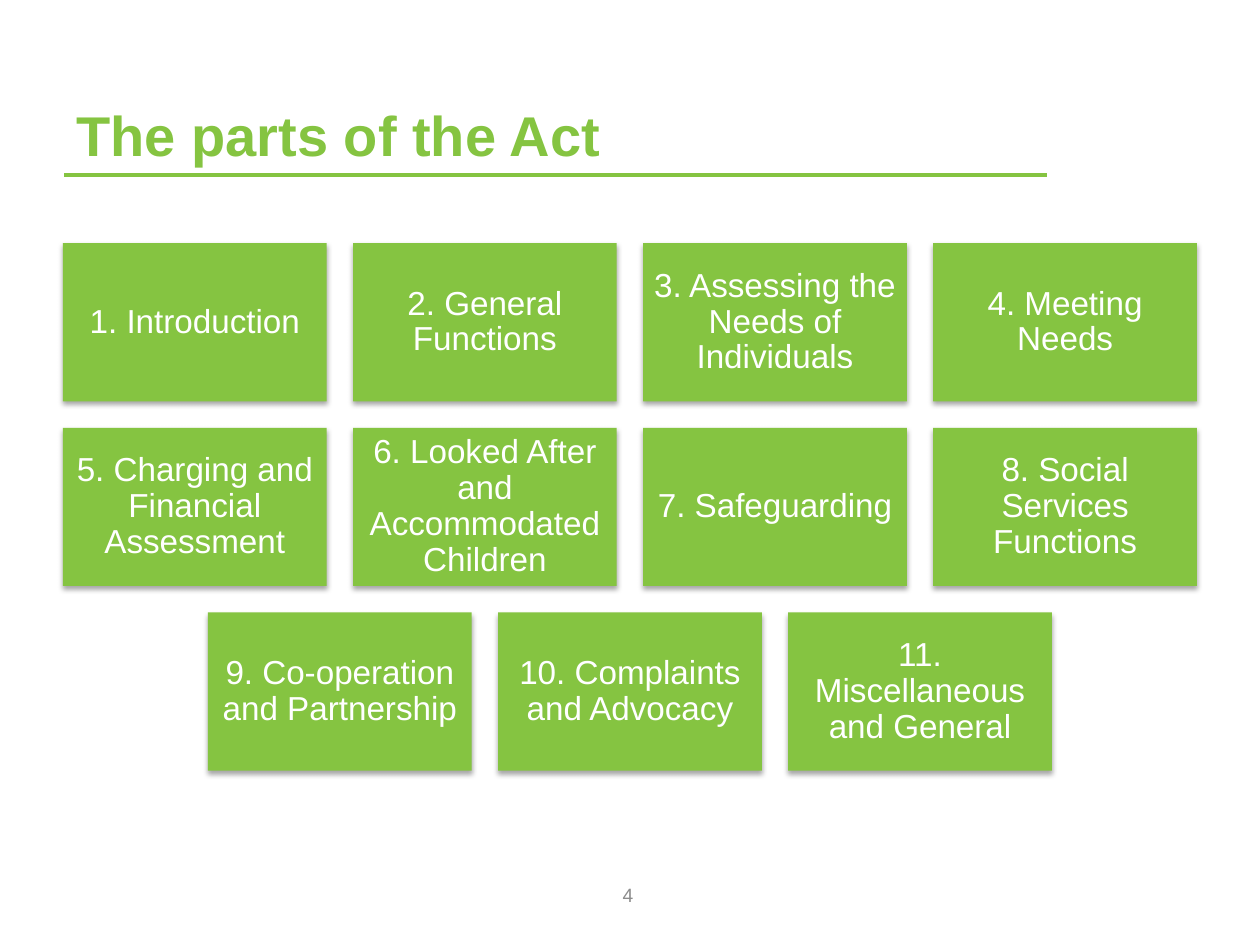
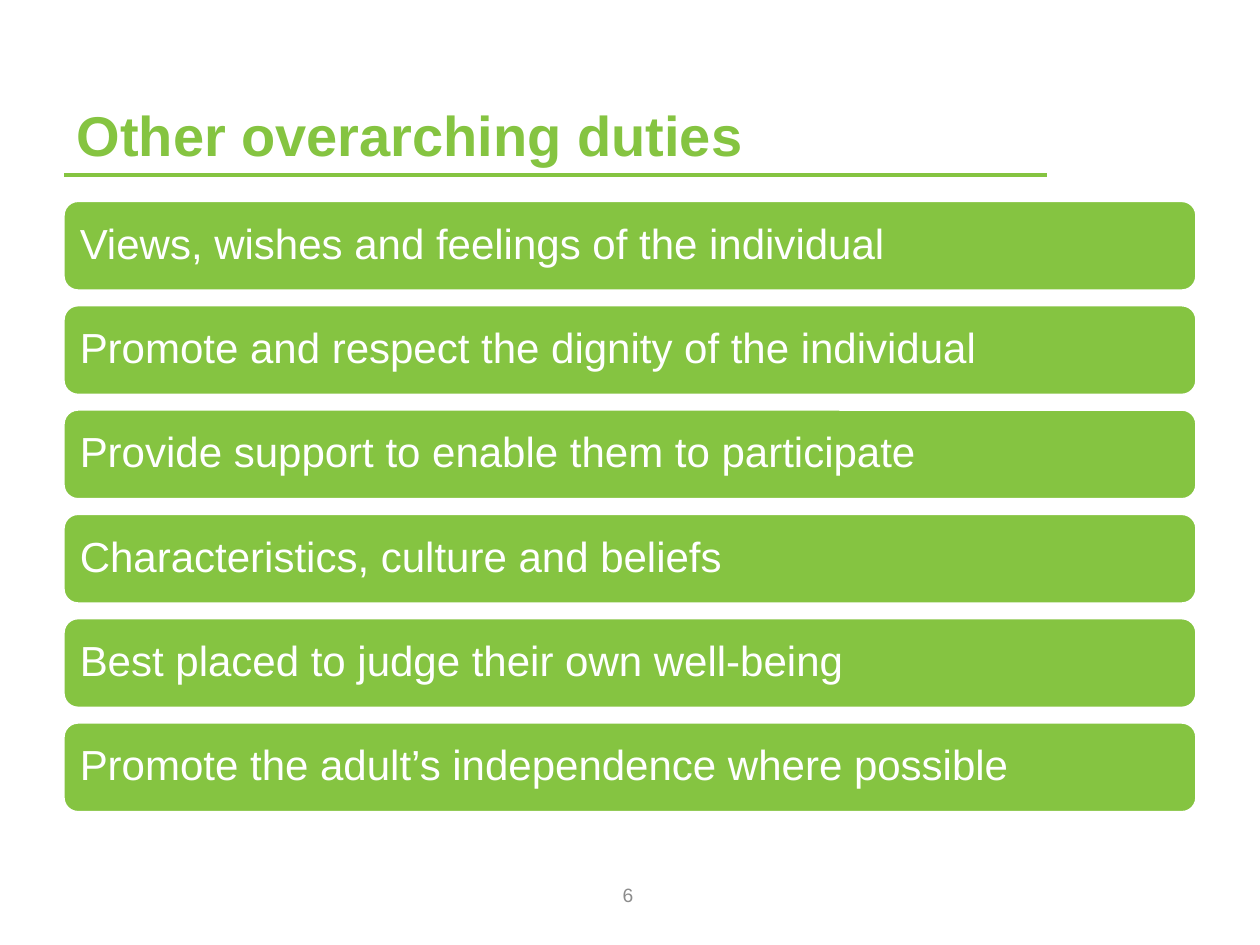
from lxml.etree import SubElement
from pptx import Presentation
from pptx.dml.color import RGBColor
from pptx.enum.shapes import MSO_CONNECTOR, MSO_SHAPE
from pptx.enum.text import MSO_ANCHOR, PP_ALIGN
from pptx.oxml.ns import qn
from pptx.util import Inches, Pt

GREEN = RGBColor(0x85, 0xC4, 0x41)
WHITE = RGBColor(0xFF, 0xFF, 0xFF)
GREY = RGBColor(0x8C, 0x8C, 0x8C)
FONT = "Arial"

SLIDE_WIDTH, SLIDE_HEIGHT = Inches(10), Inches(7.5)
MARGIN = SLIDE_WIDTH * 0.05
CONTENT_WIDTH = SLIDE_WIDTH - 2 * MARGIN
TITLE_LEFT, TITLE_WIDTH = Inches(0.51), Inches(7.8)
RULE_TOP = Inches(1.39)

TILE_COLUMNS = 4
TILE_GAP_SHARE = 0.1
TILE_WIDTH = CONTENT_WIDTH / (TILE_COLUMNS + (TILE_COLUMNS - 1) * TILE_GAP_SHARE)
TILE_HEIGHT = TILE_WIDTH * 0.6
TILE_GAP = TILE_WIDTH * TILE_GAP_SHARE
TILES_TOP = Inches(1.93)

BAR_HEIGHT = Inches(0.72)
BAR_PITCH = BAR_HEIGHT * 1.15
BARS_TOP = Inches(1.59)

ACT_PARTS = [
    "Introduction",
    "General Functions",
    "Assessing the Needs of Individuals",
    "Meeting Needs",
    "Charging and Financial Assessment",
    "Looked After and Accommodated Children",
    "Safeguarding",
    "Social Services Functions",
    "Co-operation and Partnership",
    "Complaints and Advocacy",
    "Miscellaneous and General",
]
DUTIES = [
    "Views, wishes and feelings of the individual",
    "Promote and respect the dignity of the individual",
    "Provide support to enable them to participate",
    "Characteristics, culture and beliefs",
    "Best placed to judge their own well-being",
    "Promote the adult’s independence where possible",
]


def write(shape, text, size, color, align=PP_ALIGN.LEFT, anchor=MSO_ANCHOR.MIDDLE, bold=False):
    """Fill a shape with one styled paragraph and return that paragraph."""
    frame = shape.text_frame
    frame.word_wrap = True
    frame.vertical_anchor = anchor
    frame.text = text
    paragraph = frame.paragraphs[0]
    paragraph.alignment = align
    font = paragraph.runs[0].font
    font.name, font.size, font.bold = FONT, Pt(size), bold
    font.color.rgb = color
    return paragraph


def add_label_box(slide, *box, **style):
    """Add a text box with the given place and text style."""
    write(slide.shapes.add_textbox(*map(int, box)), **style)


def add_rule(slide):
    """Draw the green rule below the title."""
    rule = slide.shapes.add_connector(
        MSO_CONNECTOR.STRAIGHT, TITLE_LEFT, RULE_TOP, TITLE_LEFT + TITLE_WIDTH, RULE_TOP)
    rule.line.color.rgb = GREEN
    rule.line.width = Pt(2)
    SubElement(rule.element.spPr, qn("a:effectLst"))


def add_titled_slide(deck, title, number):
    """Add a blank slide with title, rule and slide number."""
    slide = deck.slides.add_slide(deck.slide_layouts[6])
    add_rule(slide)
    add_label_box(slide, TITLE_LEFT, Inches(0.29), TITLE_WIDTH, Inches(1.09),
                  text=title, size=32, color=GREEN, anchor=MSO_ANCHOR.BOTTOM, bold=True)
    add_label_box(slide, Inches(3.82), SLIDE_HEIGHT * 0.92, Inches(2.33), Inches(0.4),
                  text=str(number), size=11, color=GREY, align=PP_ALIGN.CENTER)
    return slide


def add_green_panel(slide, outline, box, text, size, inset, align):
    """Add a green shape with white text and even insets."""
    panel = slide.shapes.add_shape(outline, *map(int, box))
    panel.shadow.inherit = False
    panel.fill.solid()
    panel.fill.fore_color.rgb = GREEN
    panel.line.fill.background()
    frame = panel.text_frame
    frame.margin_left = frame.margin_right = Inches(inset)
    frame.margin_top = frame.margin_bottom = Inches(inset)
    write(panel, text, size, WHITE, align).line_spacing = 0.9
    return panel


def add_soft_shadow(panel):
    """Cast a short blurred shadow straight down."""
    effects = panel.element.spPr.find(qn("a:effectLst"))
    shadow = SubElement(effects, qn("a:outerShdw"), blurRad=str(Pt(3.1)), dist=str(Pt(1.8)),
                        dir="5400000", rotWithShape="0")
    black = SubElement(shadow, qn("a:srgbClr"), val="000000")
    SubElement(black, qn("a:alpha"), val="35000")


def add_tile_grid(slide, parts):
    """Lay out numbered tiles in rows, each row centred on the slide."""
    for start in range(0, len(parts), TILE_COLUMNS):
        row_parts = parts[start:start + TILE_COLUMNS]
        row_width = len(row_parts) * (TILE_WIDTH + TILE_GAP) - TILE_GAP
        row_left = (SLIDE_WIDTH - row_width) / 2
        top = TILES_TOP + start // TILE_COLUMNS * (TILE_HEIGHT + TILE_GAP)
        for column, part in enumerate(row_parts):
            left = row_left + column * (TILE_WIDTH + TILE_GAP)
            tile = add_green_panel(
                slide, MSO_SHAPE.RECTANGLE, (left, top, TILE_WIDTH, TILE_HEIGHT),
                f"{start + column + 1}. {part}", 19, 0.08, PP_ALIGN.CENTER)
            add_soft_shadow(tile)


def add_bar_stack(slide, duties):
    """Stack one full-width rounded bar per duty."""
    for row, duty in enumerate(duties):
        bar = add_green_panel(
            slide, MSO_SHAPE.ROUNDED_RECTANGLE,
            (MARGIN, BARS_TOP + row * BAR_PITCH, CONTENT_WIDTH, BAR_HEIGHT),
            duty, 24, 0.1, PP_ALIGN.LEFT)
        bar.line.color.rgb = WHITE
        bar.line.width = Pt(2)


def main():
    """Build and save both slides."""
    deck = Presentation()
    deck.slide_width, deck.slide_height = SLIDE_WIDTH, SLIDE_HEIGHT
    add_tile_grid(add_titled_slide(deck, "The parts of the Act", 4), ACT_PARTS)
    add_bar_stack(add_titled_slide(deck, "Other overarching duties", 6), DUTIES)
    deck.save("out.pptx")


if __name__ == "__main__":
    main()
